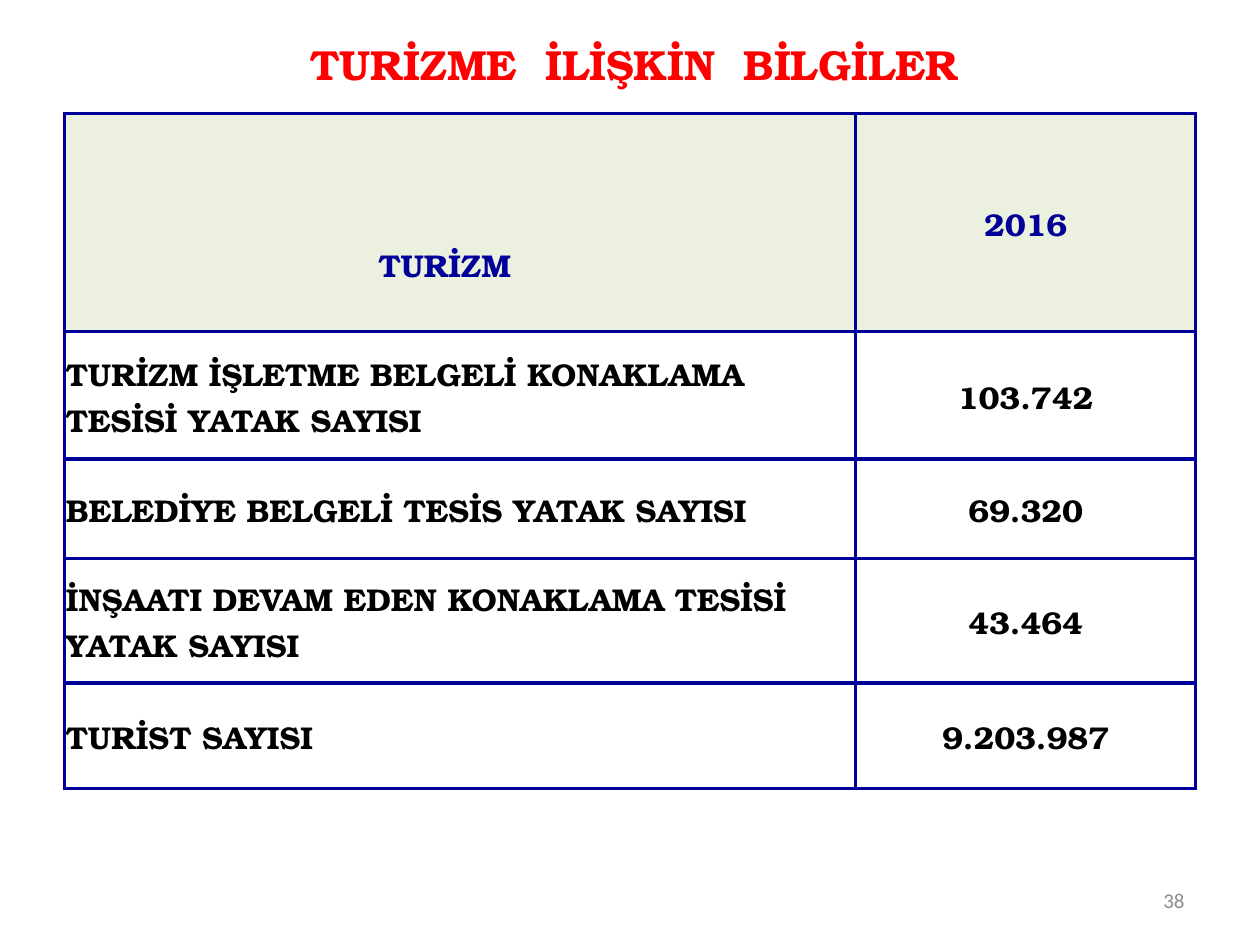
from dataclasses import dataclass

from lxml.etree import SubElement
from pptx import Presentation
from pptx.dml.color import RGBColor
from pptx.enum.text import MSO_ANCHOR, MSO_AUTO_SIZE, PP_ALIGN
from pptx.oxml.ns import qn
from pptx.util import Cm, Pt

COLORS = {
    "title": "FF0000",
    "navy": "000099",
    "header": "EBF1DE",
    "body": "FFFFFF",
    "text": "000000",
    "number": "8C8C8C",
}
SERIF = "TeX Gyre Bonum"
COLUMN_WIDTHS = (15.95, 6.85)
MARGIN = 0.03


@dataclass
class TourismRow:
    label: str
    value: str
    height: float


HEADER = TourismRow("TURİZM", "2016", 4.39)
ROWS = [
    TourismRow("TURİZM İŞLETME BELGELİ KONAKLAMA TESİSİ YATAK SAYISI", "103.742", 2.57),
    TourismRow("BELEDİYE BELGELİ TESİS YATAK SAYISI", "69.320", 2.01),
    TourismRow("İNŞAATI DEVAM EDEN KONAKLAMA TESİSİ YATAK SAYISI", "43.464", 2.51),
    TourismRow("TURİST SAYISI", "9.203.987", 2.13),
]


def write(frame, text: str, size: float, color: str, align: PP_ALIGN,
          font: str = SERIF, bold: bool = True) -> None:
    frame.text = text
    para = frame.paragraphs[0]
    para.alignment = align
    para.font.name = font
    para.font.size = Pt(size)
    para.font.bold = bold
    para.font.color.rgb = RGBColor.from_string(COLORS[color])


def add_borders(cell, color: str, width: float) -> None:
    properties = cell._tc.get_or_add_tcPr()
    for side in ("L", "R", "T", "B"):
        line = SubElement(properties, qn(f"a:ln{side}"), w=str(Pt(width)))
        fill = SubElement(line, qn("a:solidFill"))
        SubElement(fill, qn("a:srgbClr"), val=COLORS[color])


def format_cell(cell, text: str, align: PP_ALIGN, color: str, fill: str) -> None:
    add_borders(cell, "navy", 2.25)
    cell.fill.solid()
    cell.fill.fore_color.rgb = RGBColor.from_string(COLORS[fill])
    cell.margin_left = cell.margin_right = cell.margin_top = Cm(MARGIN)
    cell.margin_bottom = 0
    cell.vertical_anchor = MSO_ANCHOR.MIDDLE
    write(cell.text_frame, text, 18, color, align)


def add_title(page) -> None:
    title = page.shapes.title
    title.left, title.top, title.width, title.height = Cm(0.89), Cm(0.64), Cm(23.8), Cm(1.27)
    frame = title.text_frame
    write(frame, "TURİZME  İLİŞKİN  BİLGİLER", 24, "title", PP_ALIGN.CENTER)
    frame.auto_size = MSO_AUTO_SIZE.NONE
    frame.vertical_anchor = MSO_ANCHOR.TOP


def add_tourism_table(page) -> None:
    rows = [HEADER, *ROWS]
    table = page.shapes.add_table(
        len(rows), len(COLUMN_WIDTHS), Cm(1.3), Cm(2.29),
        Cm(sum(COLUMN_WIDTHS)), Cm(sum(row.height for row in rows)),
    ).table
    for column, width in zip(table.columns, COLUMN_WIDTHS):
        column.width = Cm(width)
    for index, row in enumerate(rows):
        table.rows[index].height = Cm(row.height)
        is_header = index == 0
        color, fill = ("navy", "header") if is_header else ("text", "body")
        label_align = PP_ALIGN.CENTER if is_header else PP_ALIGN.LEFT
        format_cell(table.cell(index, 0), row.label, label_align, color, fill)
        format_cell(table.cell(index, 1), row.value, PP_ALIGN.CENTER, color, fill)
    heading = table.cell(0, 0)
    heading.vertical_anchor = MSO_ANCHOR.BOTTOM
    heading.margin_bottom = Cm(0.9)
    heading.margin_right = Cm(0.65)


def add_page_number(page) -> None:
    box = page.shapes.add_textbox(Cm(18.2), Cm(17.65), Cm(5.93), Cm(1.01))
    frame = box.text_frame
    frame.word_wrap = True
    frame.vertical_anchor = MSO_ANCHOR.MIDDLE
    write(frame, "38", 12, "number", PP_ALIGN.RIGHT, "Calibri", False)


def main() -> None:
    deck = Presentation()
    deck.slide_width, deck.slide_height = Cm(25.4), Cm(19.05)
    page = deck.slides.add_slide(deck.slide_layouts[5])
    add_title(page)
    add_tourism_table(page)
    add_page_number(page)
    deck.save("out.pptx")


if __name__ == "__main__":
    main()
